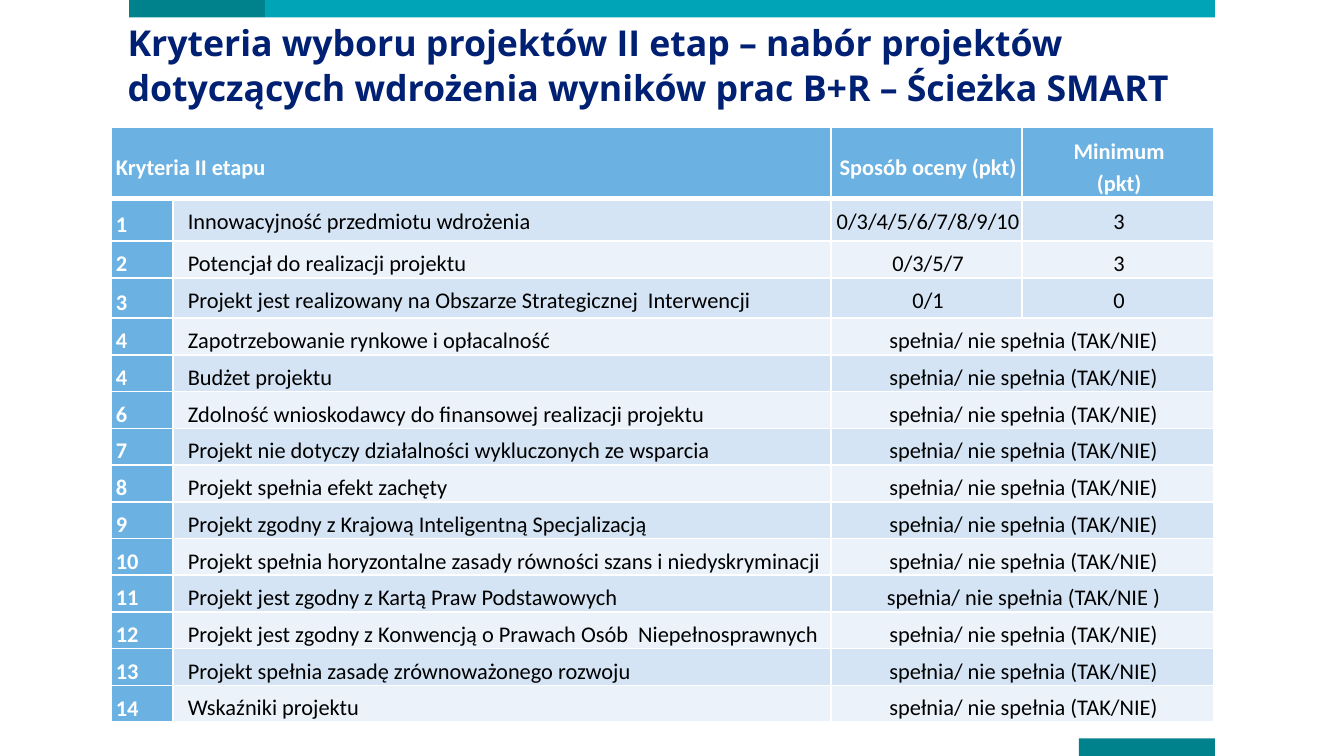
from lxml import etree
from pptx import Presentation
from pptx import util as u
from pptx.dml.color import RGBColor
from pptx.enum import shapes, text
from pptx.oxml.ns import qn

# Content
TITLE = ("Kryteria wyboru projektów II etap – nabór projektów "
         "dotyczących wdrożenia wyników prac B+R – Ścieżka SMART")
HEADER = ["Kryteria II etapu", "", "Sposób oceny (pkt)", "Minimum\n(pkt)"]
YES_NO = "spełnia/ nie spełnia (TAK/NIE)"
SCORED = [
    ("1", "Innowacyjność przedmiotu wdrożenia", "0/3/4/5/6/7/8/9/10", "3"),
    ("2", "Potencjał do realizacji projektu", "0/3/5/7", "3"),
    ("3", "Projekt jest realizowany na Obszarze Strategicznej  Interwencji", "0/1", "0"),
]
PASS_FAIL = [
    ("4", "Zapotrzebowanie rynkowe i opłacalność", YES_NO),
    ("4", "Budżet projektu", YES_NO),
    ("6", "Zdolność wnioskodawcy do finansowej realizacji projektu", YES_NO),
    ("7", "Projekt nie dotyczy działalności wykluczonych ze wsparcia", YES_NO),
    ("8", "Projekt spełnia efekt zachęty", YES_NO),
    ("9", "Projekt zgodny z Krajową Inteligentną Specjalizacją", YES_NO),
    ("10", "Projekt spełnia horyzontalne zasady równości szans i niedyskryminacji", YES_NO),
    ("11", "Projekt jest zgodny z Kartą Praw Podstawowych", "spełnia/ nie spełnia (TAK/NIE )"),
    ("12", "Projekt jest zgodny z Konwencją o Prawach Osób  Niepełnosprawnych", YES_NO),
    ("13", "Projekt spełnia zasadę zrównoważonego rozwoju", YES_NO),
    ("14", "Wskaźniki projektu", YES_NO),
]
ROWS = [HEADER, *SCORED, *PASS_FAIL]

# Format, lengths in cm
C = {"navy": "002073", "teal": "00828C", "cyan": "00A4B7", "head": "6BB1E2",
     "odd": "D4E4F4", "even": "EBF2FA", "white": "FFFFFF", "black": "000000"}
COLS = [1.16, 12.44, 3.61, 3.61]
HEIGHTS = [1.35, 0.8, 0.67, 0.76] + [0.67] * len(PASS_FAIL)
BAR_H = 0.33
BARS = [(2.44, 0, 2.57, "teal"), (5.01, 0, 17.95, "cyan"), (20.39, 13.96, 2.57, "teal")]
LEFT, CENTER = text.PP_ALIGN.LEFT, text.PP_ALIGN.CENTER
TOP, MIDDLE = text.MSO_ANCHOR.TOP, text.MSO_ANCHOR.MIDDLE


def rgb(name):
    return RGBColor.from_string(C[name])


def write(tf, content, size=12, font="Calibri", color="black", bold=False,
          align=LEFT, spacing=1.15, after=0.3, margin=0, indent=0):
    for i, line in enumerate(content.split("\n")):
        p = tf.paragraphs[0] if i == 0 else tf.add_paragraph()
        p.alignment, p.line_spacing = align, spacing
        p.space_before, p.space_after = u.Pt(0), u.Pt(after)
        pPr = p._p.get_or_add_pPr()
        pPr.set("marL", str(u.Cm(margin)))
        pPr.set("indent", str(u.Cm(indent)))
        r = p.add_run()
        r.text = line
        r.font.size, r.font.name, r.font.bold = u.Pt(size), font, bold
        r.font.color.rgb = rgb(color)


def set_borders(cell, top=1, bottom=1):
    tcPr = cell._tc.get_or_add_tcPr()
    widths = {"lnL": 1, "lnR": 1, "lnT": top, "lnB": bottom}
    for i, (side, width) in enumerate(widths.items()):
        ln = etree.Element(qn("a:" + side), w=str(u.Pt(width)))
        fill = etree.SubElement(ln, qn("a:solidFill"))
        etree.SubElement(fill, qn("a:srgbClr"), val=C["white"])
        tcPr.insert(i, ln)


prs = Presentation()
prs.slide_width, prs.slide_height = u.Cm(25.4), u.Cm(14.29)
s = prs.slides.add_slide(prs.slide_layouts[5])

# Top and bottom bars
for x, y, w, color in BARS:
    sp = s.shapes.add_shape(shapes.MSO_SHAPE.RECTANGLE, u.Cm(x), u.Cm(y), u.Cm(w), u.Cm(BAR_H))
    sp.shadow.inherit = False
    sp.fill.solid()
    sp.fill.fore_color.rgb = rgb(color)
    sp.line.fill.background()

# Title
title = s.shapes.title
title.left, title.top, title.width, title.height = u.Cm(2.41), u.Cm(0.33), u.Cm(20.52), u.Cm(2.08)
tf = title.text_frame
tf.margin_left = tf.margin_top = tf.margin_right = tf.margin_bottom = 0
tf.vertical_anchor, tf.word_wrap, tf.auto_size = TOP, True, text.MSO_AUTO_SIZE.NONE
write(tf, TITLE, size=19.1, font="Open Sans", color="navy", bold=True,
      spacing=u.Pt(24.5), after=0)

# Criteria table
table = s.shapes.add_table(len(ROWS), len(COLS), u.Cm(2.11), u.Cm(2.41),
                           u.Cm(sum(COLS)), u.Cm(sum(HEIGHTS))).table
for col, width in zip(table.columns, COLS):
    col.width = u.Cm(width)
for row, height in zip(table.rows, HEIGHTS):
    row.height = u.Cm(height)

for i, row in enumerate(ROWS):
    for j in range(len(COLS)):
        cell = table.cell(i, j)
        heading = i == 0 or j == 0
        cell.margin_left, cell.margin_top = u.Cm(0.08), u.Cm(0.1)
        cell.margin_right, cell.margin_bottom = u.Cm(0.03), 0
        cell.vertical_anchor = MIDDLE if heading else TOP
        cell.fill.solid()
        cell.fill.fore_color.rgb = rgb("head" if heading else "odd" if i % 2 else "even")
        set_borders(cell, top=3 if i == 1 else 1, bottom=3 if i == 0 else 1)
        if j < len(row) and row[j]:
            write(cell.text_frame, row[j], color="white" if heading else "black", bold=heading,
                  align=CENTER if j > 1 else LEFT, margin=0.23 if j == 1 else 0, indent=-0.03)
    if i == 0:
        table.cell(i, 0).merge(table.cell(i, 1))
    elif len(row) == 3:
        table.cell(i, 2).merge(table.cell(i, 3))

prs.save("out.pptx")
